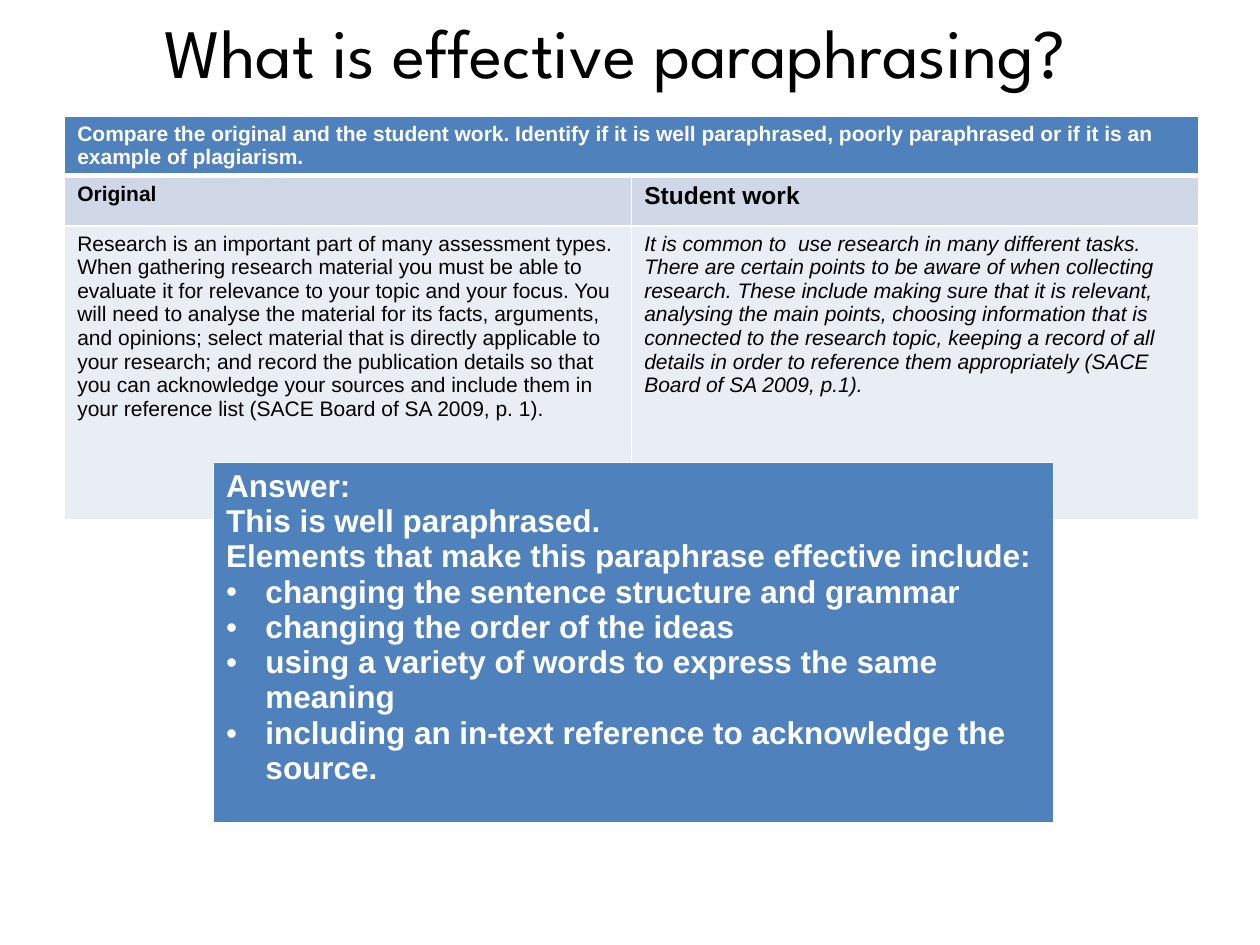
from dataclasses import dataclass

from lxml import etree
from pptx import Presentation
from pptx.dml.color import RGBColor
from pptx.enum.text import MSO_ANCHOR, MSO_AUTO_SIZE, PP_ALIGN
from pptx.oxml.ns import qn
from pptx.util import Pt

CENTER = PP_ALIGN.CENTER
MIDDLE = MSO_ANCHOR.MIDDLE
NO_FIT = MSO_AUTO_SIZE.NONE


@dataclass(frozen=True)
class Theme:
    title_font: str = "League Spartan"
    body_font: str = "Arial"
    title_size: float = 39.6
    answer_size: float = 18
    heading_size: float = 14
    text_size: float = 12
    accent: str = "4F81BD"
    band: str = "D0D8E8"
    pale: str = "E9EDF4"
    white: str = "FFFFFF"
    black: str = "000000"


class Deck:
    """Hold the theme and current slide, and draw each kind of element."""

    def __init__(self, prs, theme):
        self.theme = theme
        self.slide = prs.slides.add_slide(prs.slide_layouts[5])

    def run(self, p, text, size, color, font=None, bold=False, italic=False):
        r = p.add_run()
        r.text = text
        r.font.name = font or self.theme.body_font
        r.font.size = Pt(size)
        r.font.bold = bold
        r.font.italic = italic
        r.font.color.rgb = RGBColor.from_string(color)

    def title(self, text, left, top, width, height):
        sp = self.slide.shapes.title
        sp.left, sp.top, sp.width, sp.height = map(Pt, (left, top, width, height))
        tf = sp.text_frame
        tf.auto_size = NO_FIT
        tf.word_wrap = True
        tf.vertical_anchor = MIDDLE
        p = tf.paragraphs[0]
        p.alignment = CENTER
        t = self.theme
        self.run(p, text, t.title_size, t.black, t.title_font)

    def table(self, left, top, widths, heights):
        frame = self.slide.shapes.add_table(
            len(heights), len(widths), Pt(left), Pt(top), Pt(sum(widths)), Pt(sum(heights)))
        table = frame.table
        for column, width in zip(table.columns, widths):
            column.width = Pt(width)
        for row, height in zip(table.rows, heights):
            row.height = Pt(height)
        return table

    def borders(self, cell, bottom):
        tc_pr = cell._tc.get_or_add_tcPr()
        for index, (side, width) in enumerate(zip("LRTB", (1, 1, 1, bottom))):
            ln = etree.Element(qn(f"a:ln{side}"), w=str(Pt(width)))
            fill = etree.SubElement(ln, qn("a:solidFill"))
            etree.SubElement(fill, qn("a:srgbClr"), val=self.theme.white)
            tc_pr.insert(index, ln)

    def cell(self, cell, fill, bottom=1):
        cell.fill.solid()
        cell.fill.fore_color.rgb = RGBColor.from_string(fill)
        self.borders(cell, bottom)

    def text(self, cell, lines, size, color, bold=False, italic=False, bullets=()):
        tf = cell.text_frame
        for index, line in enumerate((*lines, *bullets)):
            p = tf.add_paragraph() if index else tf.paragraphs[0]
            if index >= len(lines):
                self.bullet(p)
            self.run(p, line, size, color, bold=bold, italic=italic)

    def bullet(self, p):
        p_pr = p._p.get_or_add_pPr()
        p_pr.set("marL", str(Pt(22.5)))
        p_pr.set("indent", str(Pt(-22.5)))
        etree.SubElement(p_pr, qn("a:buFont"), typeface=self.theme.body_font)
        etree.SubElement(p_pr, qn("a:buChar"), char="•")


def main():
    prs = Presentation()
    prs.slide_width, prs.slide_height = Pt(720), Pt(540)
    t = Theme()
    deck = Deck(prs, t)
    deck.title("What is effective paraphrasing?", 8.6, 9.4, 686, 39.6)

    comparison = deck.table(37, 66.2, (324, 324), (34.2, 28.8, 168))
    for row, (fill, bottom) in enumerate(((t.accent, 3), (t.band, 1), (t.pale, 1))):
        for column in range(2):
            deck.cell(comparison.cell(row, column), fill, bottom)
    header = comparison.cell(0, 0)
    header.merge(comparison.cell(0, 1))
    deck.text(header, [
        "Compare the original and the student work. Identify if it is well paraphrased, "
        "poorly paraphrased or if it is an example of plagiarism."],
        t.text_size, t.white, bold=True)
    deck.text(comparison.cell(1, 0), ["Original"], t.text_size, t.black, bold=True)
    deck.text(comparison.cell(1, 1), ["Student work"], t.heading_size, t.black, bold=True)
    deck.text(comparison.cell(2, 0), [
        "Research is an important part of many assessment types. When gathering research "
        "material you must be able to evaluate it for relevance to your topic and your focus. "
        "You will need to analyse the material for its facts, arguments, and opinions; select "
        "material that is directly applicable to your research; and record the publication "
        "details so that you can acknowledge your sources and include them in your reference "
        "list (SACE Board of SA 2009, p. 1)."],
        t.text_size, t.black)
    deck.text(comparison.cell(2, 1), [
        "It is common to  use research in many different tasks. There are certain points to be "
        "aware of when collecting research. These include making sure that it is relevant, "
        "analysing the main points, choosing information that is connected to the research "
        "topic, keeping a record of all details in order to reference them appropriately "
        "(SACE Board of SA 2009, p.1)."],
        t.text_size, t.black, italic=True)

    answer = deck.table(122, 264.2, (480,), (207,)).cell(0, 0)
    deck.cell(answer, t.accent, 3)
    deck.text(answer, [
        "Answer:",
        "This is well paraphrased.",
        "Elements that make this paraphrase effective include:"],
        t.answer_size, t.white, bold=True, bullets=[
            "changing the sentence structure and grammar",
            "changing the order of the ideas",
            "using a variety of words to express the same meaning",
            "including an in-text reference to acknowledge the source."])

    prs.save("out.pptx")


if __name__ == "__main__":
    main()
